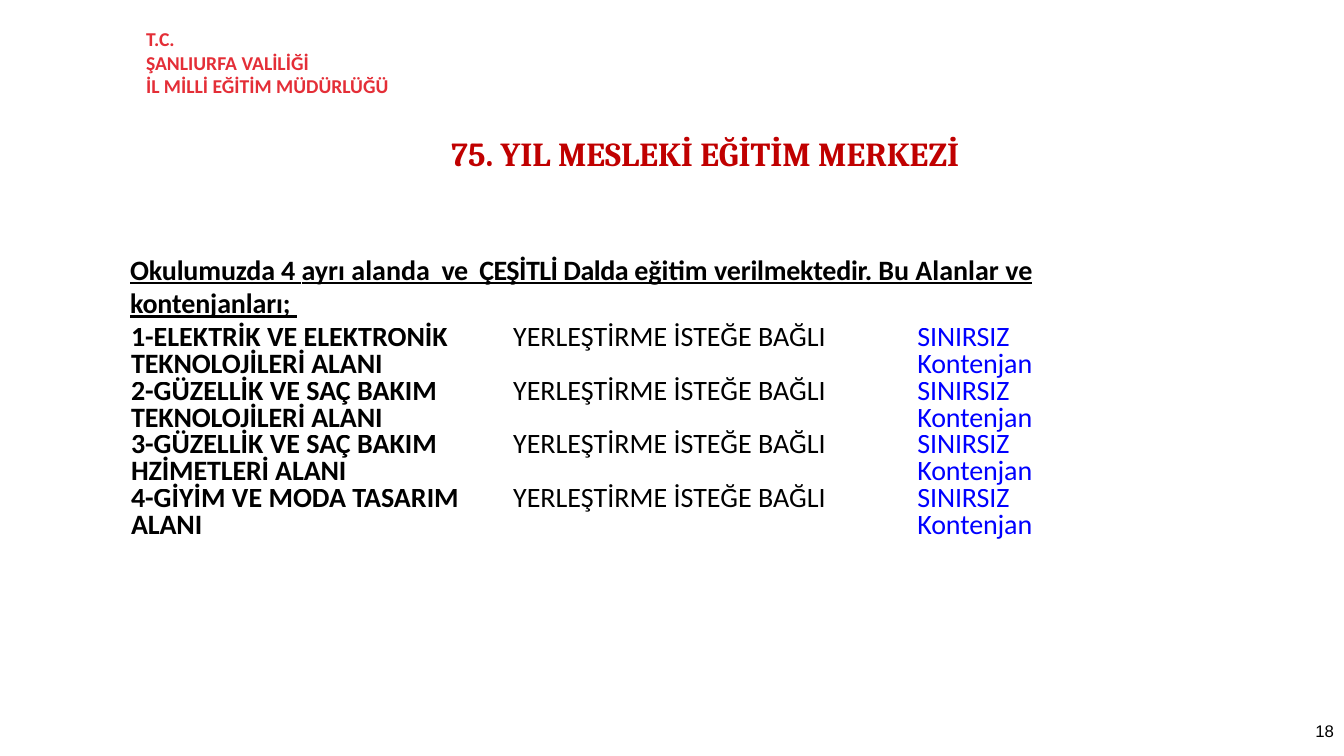
from dataclasses import dataclass

from pptx import Presentation
from pptx.dml.color import RGBColor
from pptx.enum.shapes import MSO_SHAPE
from pptx.enum.text import MSO_ANCHOR, PP_ALIGN
from pptx.util import Inches, Pt

RECTANGLE = MSO_SHAPE.RECTANGLE
TOP, MIDDLE = MSO_ANCHOR.TOP, MSO_ANCHOR.MIDDLE
LEFT, CENTER, RIGHT = PP_ALIGN.LEFT, PP_ALIGN.CENTER, PP_ALIGN.RIGHT


@dataclass(frozen=True)
class Theme:
    white: str = "FFFFFF"
    black: str = "000000"
    header_red: str = "E42E37"
    title_red: str = "C00000"
    quota_blue: str = "0000FF"
    body_font: str = "Calibri"
    title_font: str = "Cambria"
    number_font: str = "Arial"
    title_size: float = 24
    body_size: float = 20
    header_size: float = 14
    number_size: float = 12
    title_line: float = 27.4
    table_line: float = 19.1


THEME = Theme()


@dataclass(frozen=True)
class Style:
    size: float
    font: str
    color: str
    bold: bool = False
    underline: bool = False


@dataclass(frozen=True)
class Span:
    text: str
    spacing: float = 0


@dataclass(frozen=True)
class Field:
    number: int
    name: str
    ending: str


@dataclass(frozen=True)
class Column:
    width: float
    indent: float
    style: Style


HEADER = Style(THEME.header_size, THEME.body_font, THEME.header_red, bold=True)
TITLE = Style(THEME.title_size, THEME.title_font, THEME.title_red, bold=True)
INTRO = Style(THEME.body_size, THEME.body_font, THEME.black, bold=True, underline=True)
NUMBER = Style(THEME.number_size, THEME.number_font, THEME.black)

COLUMNS = [
    Column(3.77, 0.04, Style(THEME.body_size, THEME.body_font, THEME.black, bold=True)),
    Column(3.72, 0.06, Style(THEME.body_size, THEME.body_font, THEME.black)),
    Column(2.36, 0.35, Style(THEME.body_size, THEME.body_font, THEME.quota_blue)),
]
ROW_HEIGHTS = [0.36] + [0.44] * 6 + [0.36]

HEADER_LINES = ["T.C.", "ŞANLIURFA VALİLİĞİ", "İL MİLLİ EĞİTİM MÜDÜRLÜĞÜ"]
INTRO_SPANS = [
    Span("Okulumuzda 4 ", -0.1), Span("ayrı"), Span(" ", -0.2), Span("alanda"),
    Span("  ve  ÇEŞİTLİ Dalda ", -0.4), Span("eğitim"), Span(" ", -0.5),
    Span("verilmektedir. ", -0.2), Span("Bu"), Span(" ", -0.3), Span("Alanlar"),
    Span(" ", -0.4), Span("ve"), Span(" kontenjanları;", -0.1), Span(" ", 5),
]
FIELDS = [
    Field(1, "ELEKTRİK VE ELEKTRONİK ", "TEKNOLOJİLERİ ALANI"),
    Field(2, "GÜZELLİK VE SAÇ BAKIM ", "TEKNOLOJİLERİ ALANI"),
    Field(3, "GÜZELLİK VE SAÇ BAKIM ", "HZİMETLERİ ALANI"),
    Field(4, "GİYİM VE MODA TASARIM ", "ALANI"),
]


def add_spans(para, spans: list[Span], style: Style) -> None:
    for span in spans:
        run = para.add_run()
        run.text = span.text
        font = run.font
        font.size = Pt(style.size)
        font.name = style.font
        font.bold = style.bold
        font.underline = style.underline
        font.color.rgb = RGBColor.from_string(style.color)
        if span.spacing:
            run._r.get_or_add_rPr().set("spc", str(round(span.spacing * 100)))


def set_up_frame(shape, anchor=TOP, tight: bool = False):
    """Wrap and anchor the text; a tight frame has almost no margins."""
    frame = shape.text_frame
    frame.word_wrap = True
    frame.vertical_anchor = anchor
    if tight:
        frame.margin_left = frame.margin_right = frame.margin_bottom = 0
        frame.margin_top = Inches(0.01)
    return frame


def add_header(page) -> None:
    box = page.shapes.add_shape(
        RECTANGLE, Inches(1.35), Inches(0.31), Inches(2.68), Inches(0.62))
    box.shadow.inherit = False
    box.fill.solid()
    box.fill.fore_color.rgb = RGBColor.from_string(THEME.white)
    box.line.fill.background()
    frame = set_up_frame(box, MIDDLE)
    for index, line in enumerate(HEADER_LINES):
        para = frame.add_paragraph() if index else frame.paragraphs[0]
        para.alignment = LEFT
        add_spans(para, [Span(line)], HEADER)


def set_title(page) -> None:
    title = page.shapes.title
    title.left, title.top = Inches(2.06), Inches(1.33)
    title.width, title.height = Inches(9.87), Inches(0.79)
    para = set_up_frame(title, tight=True).paragraphs[0]
    para.alignment = CENTER
    para.line_spacing = Pt(THEME.title_line)
    add_spans(para, [Span("75. YIL MESLEKİ EĞİTİM MERKEZİ")], TITLE)


def add_intro(page) -> None:
    box = page.shapes.add_textbox(
        Inches(1.28), Inches(2.49), Inches(10.55), Inches(0.69))
    para = set_up_frame(box, tight=True).paragraphs[0]
    para._p.get_or_add_pPr().set("marL", str(Inches(0.01)))
    add_spans(para, INTRO_SPANS, INTRO)


def add_field_table(page) -> None:
    table = page.shapes.add_table(
        len(ROW_HEIGHTS), len(COLUMNS), Inches(1.26), Inches(3.25),
        Inches(sum(column.width for column in COLUMNS)),
        Inches(sum(ROW_HEIGHTS))).table
    table.first_row = table.horz_banding = False
    for row, height in zip(table.rows, ROW_HEIGHTS):
        row.height = Inches(height)
    for grid_column, column in zip(table.columns, COLUMNS):
        grid_column.width = Inches(column.width)
    for cell in table.iter_cells():
        cell.fill.background()
        cell.margin_left = cell.margin_right = cell.margin_top = cell.margin_bottom = 0
    for row, field in zip(table.rows, FIELDS):
        contents = [
            [Span(f"{field.number}-", -0.1), Span(field.name), Span(field.ending, -0.1)],
            [Span("YERLEŞTİRME İSTEĞE BAĞLI")],
            [Span("SINIRSIZ Kontenjan", -0.1)],
        ]
        for cell, column, spans in zip(row.cells, COLUMNS, contents):
            para = cell.text_frame.paragraphs[0]
            para._p.get_or_add_pPr().set("marL", str(Inches(column.indent)))
            para.line_spacing = Pt(THEME.table_line)
            add_spans(para, spans, column.style)


def add_page_number(page) -> None:
    box = page.shapes.add_textbox(
        Inches(11.57), Inches(7.1), Inches(1.76), Inches(0.3))
    para = set_up_frame(box).paragraphs[0]
    para.alignment = RIGHT
    add_spans(para, [Span("18")], NUMBER)


def main() -> None:
    deck = Presentation()
    deck.slide_width, deck.slide_height = Inches(13.33), Inches(7.5)
    page = deck.slides.add_slide(deck.slide_layouts[5])
    add_page_number(page)
    add_header(page)
    set_title(page)
    add_intro(page)
    add_field_table(page)
    deck.save("out.pptx")


if __name__ == "__main__":
    main()
